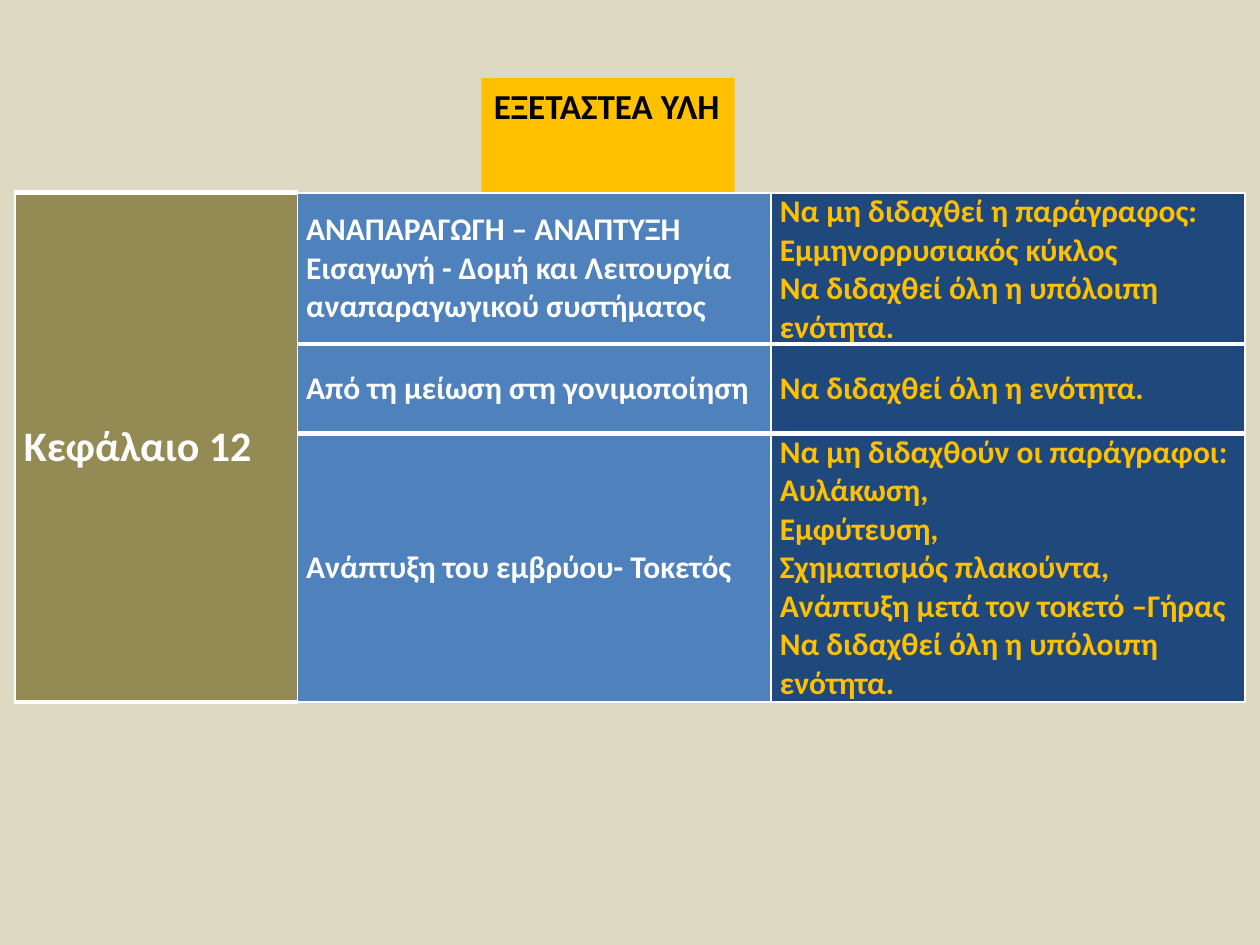
from lxml import etree
from pptx import Presentation
from pptx import util as u
from pptx.dml.color import RGBColor
from pptx.enum import text
from pptx.oxml import ns

SCALE = 9144
FONT = "Calibri"
WHITE, GOLD = "FFFFFF", "FFC000"
OLIVE, BLUE, NAVY = "948A54", "4F81BD", "1F497D"
COLUMNS = (224, 376, 376)
ROWS = (106, 71, 213)
SECTIONS = (
    (("ΑΝΑΠΑΡΑΓΩΓΗ – ΑΝΑΠΤΥΞΗ",
      "Εισαγωγή - Δομή και Λειτουργία αναπαραγωγικού συστήματος"),
     ("Να μη διδαχθεί η παράγραφος: Εμμηνορρυσιακός κύκλος",
      "Να διδαχθεί όλη η υπόλοιπη ενότητα.")),
    (("Από τη μείωση στη γονιμοποίηση",),
     ("Να διδαχθεί όλη η ενότητα.",)),
    (("Ανάπτυξη του εμβρύου- Τοκετός",),
     ("Να μη διδαχθούν οι παράγραφοι:", "Αυλάκωση,", "Εμφύτευση,",
      "Σχηματισμός πλακούντα,", "Ανάπτυξη μετά τον τοκετό –Γήρας",
      "Να διδαχθεί όλη η υπόλοιπη ενότητα.")),
)
ROW_BORDERS = ((1, 3), (1, 1), (3, 1))


def px(length):
    """Turn px into EMU."""
    return u.Emu(length * SCALE)


def color(value):
    """Turn a hex string into a colour."""
    return RGBColor.from_string(value)


def write(frame, lines, size, hex_color):
    """Write bold lines as the paragraphs of a text frame."""
    for index, line in enumerate(lines):
        paragraph = frame.add_paragraph() if index else frame.paragraphs[0]
        run = paragraph.add_run()
        run.text = line
        run.font.name, run.font.size, run.font.bold = FONT, u.Pt(size), True
        run.font.color.rgb = color(hex_color)


def add_borders(cell, top, bottom):
    """Give a cell white borders with the top and bottom widths in points."""
    properties = cell._tc.get_or_add_tcPr()
    for side, width in (("L", 1), ("R", 1), ("T", top), ("B", bottom)):
        line = etree.SubElement(properties, ns.qn(f"a:ln{side}"), w=str(u.Pt(width)))
        fill = etree.SubElement(line, ns.qn("a:solidFill"))
        etree.SubElement(fill, ns.qn("a:srgbClr"), val=WHITE)


def format_cell(cell, fill, borders):
    """Set the borders, fill, margins and anchor of a cell."""
    add_borders(cell, *borders)
    cell.fill.solid()
    cell.fill.fore_color.rgb = color(fill)
    cell.margin_left = cell.margin_right = px(7)
    cell.margin_top = cell.margin_bottom = 0
    cell.vertical_anchor = text.MSO_ANCHOR.MIDDLE


def add_title(slide, left, top, width, height):
    """Place the gold heading."""
    title = slide.shapes.title
    title.left, title.top = px(left), px(top)
    title.width, title.height = px(width), px(height)
    title.fill.solid()
    title.fill.fore_color.rgb = color(GOLD)
    frame = title.text_frame
    frame.word_wrap = False
    frame.auto_size = text.MSO_AUTO_SIZE.SHAPE_TO_FIT_TEXT
    frame.vertical_anchor = text.MSO_ANCHOR.TOP
    write(frame, ("ΕΞΕΤΑΣΤΕΑ ΥΛΗ",), 20, "000000")
    frame.paragraphs[0].alignment = text.PP_ALIGN.LEFT


def add_syllabus(slide, left, top):
    """Place the chapter table with its sections and teaching notes."""
    table = slide.shapes.add_table(
        len(ROWS), len(COLUMNS), px(left), px(top), px(sum(COLUMNS)), px(sum(ROWS))
    ).table
    for column, width in zip(table.columns, COLUMNS):
        column.width = px(width)
    for index, height in enumerate(ROWS):
        table.rows[index].height = px(height)
        chapter, *cells = (table.cell(index, column) for column in range(3))
        format_cell(chapter, OLIVE, (3, 3))
        styles = ((BLUE, WHITE), (NAVY, GOLD))
        for cell, lines, (fill, ink) in zip(cells, SECTIONS[index], styles):
            format_cell(cell, fill, ROW_BORDERS[index])
            write(cell.text_frame, lines, 18, ink)
    table.cell(0, 0).merge(table.cell(len(ROWS) - 1, 0))
    write(table.cell(0, 0).text_frame, ("Κεφάλαιο 12",), 24, WHITE)


def main():
    """Build and save the slide."""
    presentation = Presentation()
    presentation.slide_width, presentation.slide_height = px(1000), px(750)
    slide = presentation.slides.add_slide(presentation.slide_layouts[5])
    slide.background.fill.solid()
    slide.background.fill.fore_color.rgb = color("DDD9C3")
    add_syllabus(slide, 12, 153)
    add_title(slide, 382, 62, 201, 44)
    presentation.save("out.pptx")


if __name__ == "__main__":
    main()
